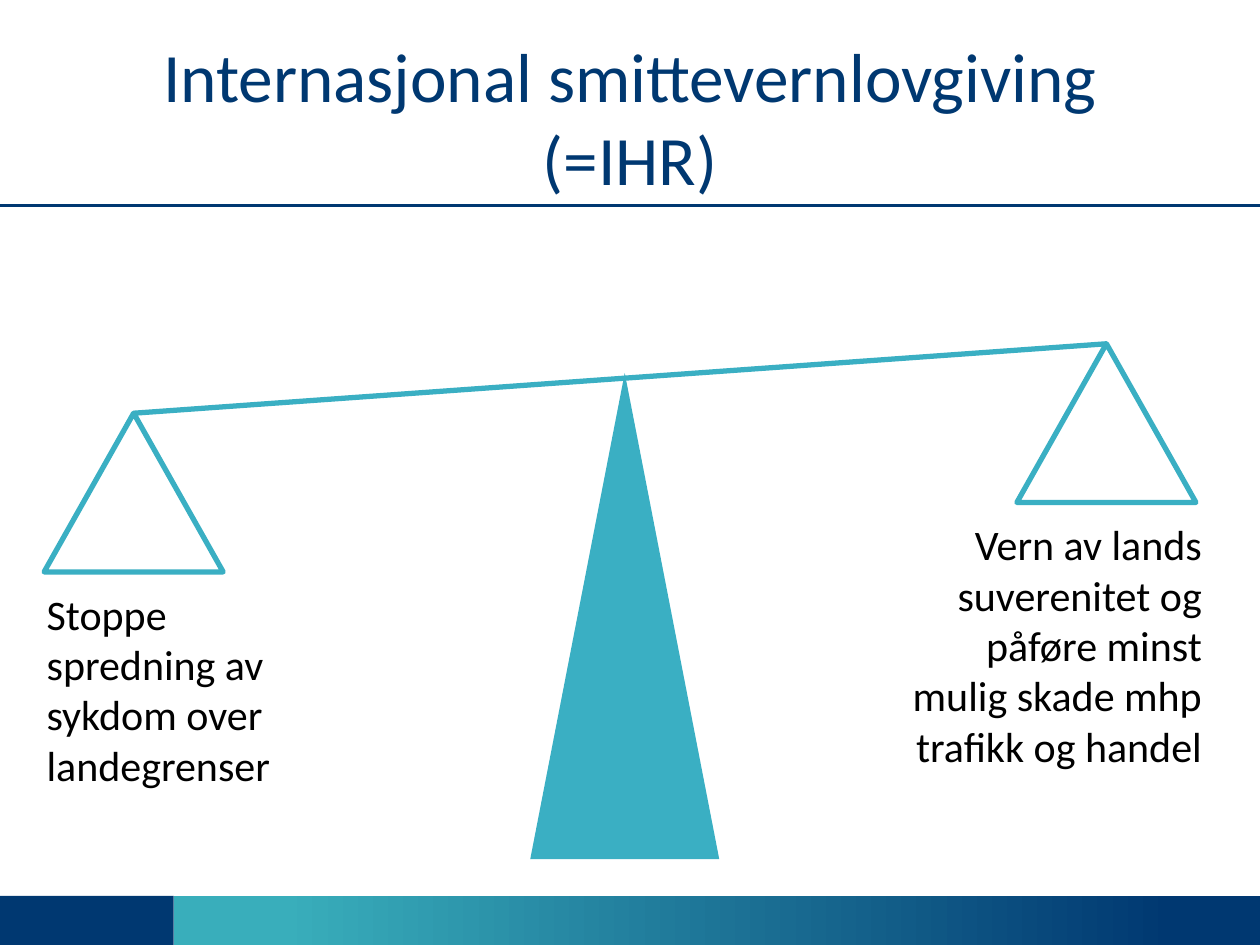
from dataclasses import dataclass

from lxml import etree
from pptx import Presentation
from pptx.dml.color import RGBColor
from pptx.enum.shapes import MSO_CONNECTOR, MSO_SHAPE
from pptx.enum.text import MSO_ANCHOR, MSO_AUTO_SIZE, PP_ALIGN
from pptx.oxml.ns import qn
from pptx.util import Cm, Pt

RECT = MSO_SHAPE.RECTANGLE
TRI = MSO_SHAPE.ISOSCELES_TRIANGLE
LINE = MSO_CONNECTOR.STRAIGHT
LEFT, MID, RIGHT = PP_ALIGN.LEFT, PP_ALIGN.CENTER, PP_ALIGN.RIGHT
TOP, CENTRE = MSO_ANCHOR.TOP, MSO_ANCHOR.MIDDLE


@dataclass(frozen=True)
class Theme:
    navy: RGBColor = RGBColor(0x00, 0x38, 0x71)
    teal: RGBColor = RGBColor(0x39, 0xAE, 0xBB)
    scale: RGBColor = RGBColor(0x3A, 0xAF, 0xC3)
    ink: RGBColor = RGBColor(0x00, 0x00, 0x00)
    font: str = "Calibri"
    title: float = 39.6
    body: float = 24
    rule: float = 2
    beam: float = 3


theme = Theme()


def write(shape, text, size=theme.body, color=theme.ink, align=LEFT, anchor=TOP):
    frame = shape.text_frame
    frame.word_wrap = True
    frame.auto_size = MSO_AUTO_SIZE.NONE
    frame.vertical_anchor = anchor
    frame.text = text
    para = frame.paragraphs[0]
    para.alignment = align
    para.font.name = theme.font
    para.font.size = Pt(size)
    para.font.color.rgb = color


def stroke(line, color, width):
    """Style a connector and switch off its shadow."""
    line.line.color.rgb = color
    line.line.width = Pt(width)
    etree.SubElement(line._element.spPr, qn("a:effectLst"))


deck = Presentation()
deck.slide_width, deck.slide_height = Cm(25.4), Cm(19.05)
slide = deck.slides.add_slide(deck.slide_layouts[5])
shapes = slide.shapes

# Footer: a navy block, then a band fading from teal to navy
block = shapes.add_shape(RECT, Cm(0), Cm(18.06), Cm(3.5), Cm(0.99))
block.fill.solid()
block.fill.fore_color.rgb = theme.navy
band = shapes.add_shape(RECT, Cm(3.5), Cm(18.06), Cm(21.9), Cm(0.99))
band.fill.gradient()
band.fill.gradient_angle = 0
fade = ((0.1, theme.teal), (0.92, theme.navy))
for stop, (place, color) in zip(band.fill.gradient_stops, fade):
    stop.position = place
    stop.color.rgb = color
for bar in (block, band):
    bar.line.fill.background()
    bar.shadow.inherit = False

# Title and the rule below it
rule = shapes.add_connector(LINE, Cm(0), Cm(4.14), Cm(25.4), Cm(4.14))
stroke(rule, theme.navy, theme.rule)
title = shapes.title
title.left, title.top = Cm(1.27), Cm(0.76)
title.width, title.height = Cm(22.86), Cm(3.18)
write(title, "Internasjonal smittevernlovgiving (=IHR)",
      size=theme.title, color=theme.navy, align=MID, anchor=CENTRE)

# Post of the scale
post = shapes.add_shape(TRI, Cm(10.69), Cm(7.52), Cm(3.81), Cm(9.8))
post.fill.solid()
post.fill.fore_color.rgb = theme.scale
post.line.fill.background()
post.shadow.inherit = False

# Pans, each with its label below
sides = (
    (0.89, 8.33, 0.69, 4.32, LEFT,
     "Stoppe spredning av sykdom over landegrenser"),
    (20.5, 6.93, 18.08, 6.35, RIGHT,
     "Vern av lands suverenitet og påføre minst mulig skade mhp "
     "trafikk og handel"),
)
pans = []
for x, y, edge, height, align, text in sides:
    pan = shapes.add_shape(TRI, Cm(x), Cm(y), Cm(3.61), Cm(3.2))
    pan.fill.background()
    pan.line.color.rgb = theme.scale
    pan.line.width = Pt(theme.beam)
    pan.shadow.inherit = False
    pans.append(pan)
    label = shapes.add_textbox(Cm(edge), Cm(y + 3.4), Cm(6.4), Cm(height))
    write(label, text, align=align)

# Beam from one pan's tip to the other's
beam = shapes.add_connector(LINE, Cm(0), Cm(0), Cm(1), Cm(1))
beam.begin_connect(pans[0], 0)
beam.end_connect(pans[1], 0)
stroke(beam, theme.scale, theme.beam)

deck.save("out.pptx")
